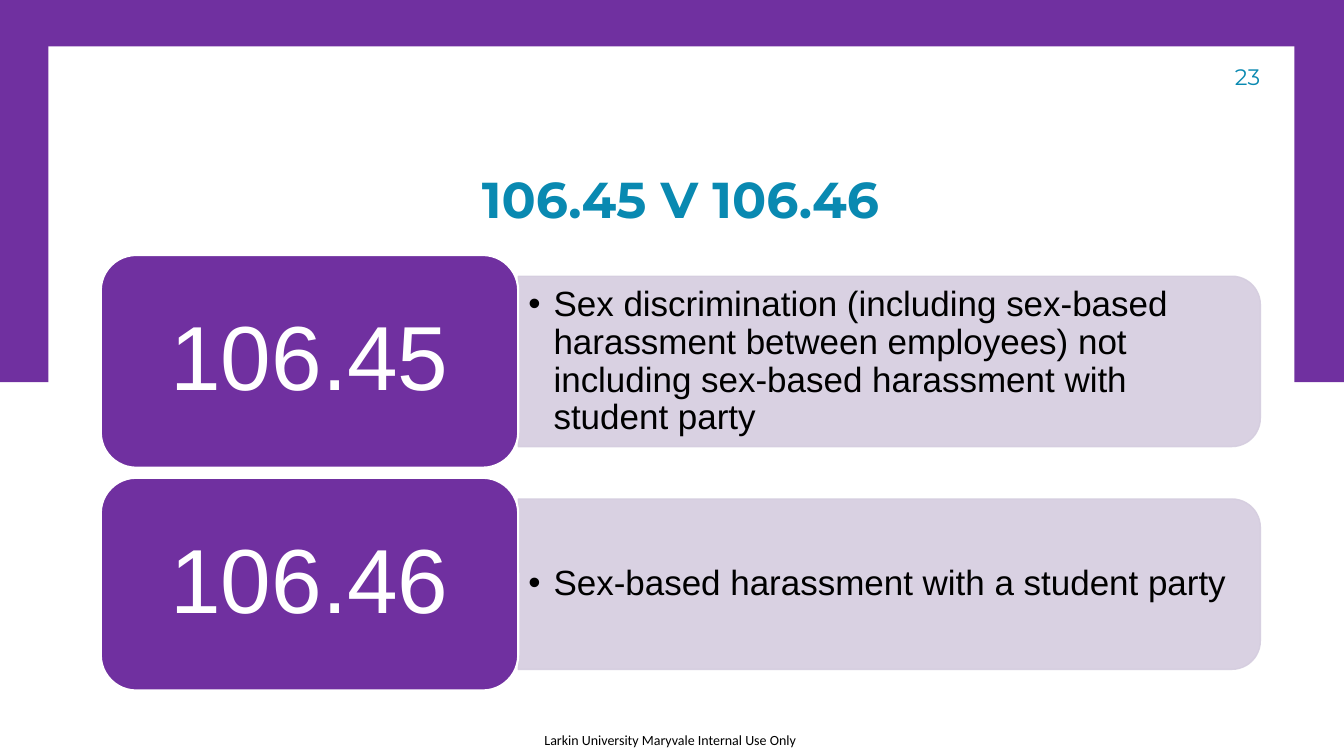
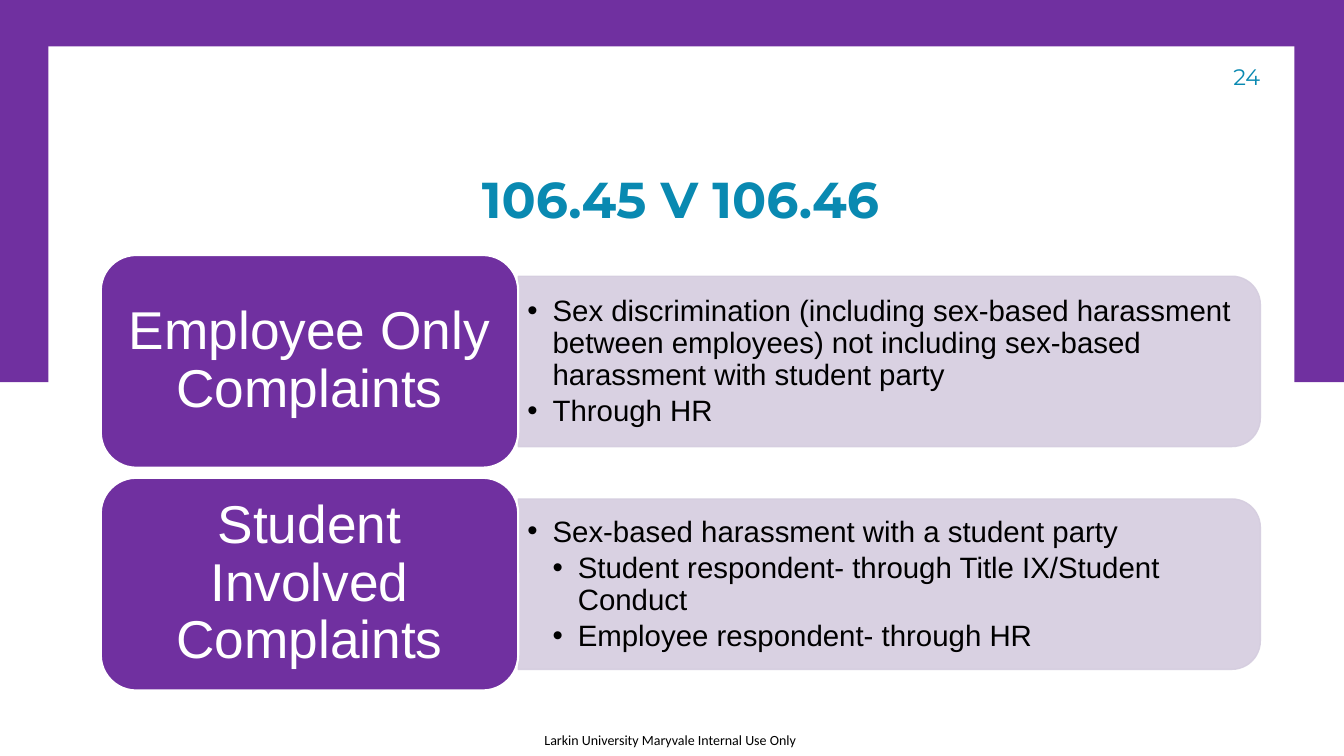
import dataclasses

import pptx
import pptx.dml.color
import pptx.enum.shapes
import pptx.enum.text
import pptx.oxml.ns
import pptx.util
from lxml import etree

EMU_PER_PX = 9144
SHAPE = pptx.enum.shapes.MSO_SHAPE
ALIGN = pptx.enum.text.PP_ALIGN
ANCHOR = pptx.enum.text.MSO_ANCHOR
qn = pptx.oxml.ns.qn


@dataclasses.dataclass(frozen=True)
class Theme:
    purple: str = "7030A0"
    lilac: str = "D5CDDF"
    teal: str = "0989B1"
    white: str = "FFFFFF"
    black: str = "000000"
    heading_font: str = "Montserrat"
    body_font: str = "Arial"
    footer_font: str = "Calibri"
    title_size: int = 36
    number_size: int = 16
    footer_size: int = 10
    panel_opacity: int = 90


@dataclasses.dataclass(frozen=True)
class RowStyle:
    label_size: int
    detail_size: int
    label_insets: tuple
    detail_insets: tuple


THEME = Theme()
LARGE = RowStyle(65, 25, (27, 14), (10, 5))
COMPACT = RowStyle(38, 21, (16, 8), (9, 4))
DISCRIMINATION = (
    "Sex discrimination (including sex-based harassment between employees) "
    "not including sex-based harassment with student party"
)
STUDENT_PARTY = "Sex-based harassment with a student party"
TITLE = "106.45 V 106.46"
FOOTER = "Larkin University Maryvale Internal Use Only"

SLIDES = [
    (23, LARGE, [
        ("106.45", [(0, DISCRIMINATION)]),
        ("106.46", [(0, STUDENT_PARTY)]),
    ]),
    (24, COMPACT, [
        ("Employee Only Complaints", [(0, DISCRIMINATION), (0, "Through HR")]),
        ("Student Involved Complaints", [
            (0, STUDENT_PARTY),
            (1, "Student respondent- through Title IX/Student Conduct"),
            (1, "Employee respondent- through HR"),
        ]),
    ]),
]


def px(length):
    return pptx.util.Emu(round(length * EMU_PER_PX))


def rgb(color):
    return pptx.dml.color.RGBColor.from_string(color)


def place(shape, box):
    shape.left, shape.top, shape.width, shape.height = map(px, box)


def add_block(slide, preset, box, fill, line=None, line_width=1):
    block = slide.shapes.add_shape(preset, *map(px, box))
    block.shadow.inherit = False
    block.fill.solid()
    block.fill.fore_color.rgb = rgb(fill)
    if line:
        block.line.color.rgb = rgb(line)
        block.line.width = pptx.util.Pt(line_width)
    else:
        block.line.fill.background()
    return block


def set_frame(shape, insets, anchor, wrap=True):
    frame = shape.text_frame
    left, top, right, bottom = map(px, insets)
    frame.margin_left, frame.margin_right = left, right
    frame.margin_top, frame.margin_bottom = top, bottom
    frame.vertical_anchor = anchor
    frame.auto_size = pptx.enum.text.MSO_AUTO_SIZE.NONE
    frame.word_wrap = wrap
    return frame


def add_run(paragraph, text, font, size, color, bold=False):
    run = paragraph.add_run()
    run.text = text
    run.font.name = font
    run.font.size = pptx.util.Pt(size)
    run.font.color.rgb = rgb(color)
    run.font.bold = bold


def add_bullet(paragraph, level):
    paragraph.level = level
    properties = paragraph._p.get_or_add_pPr()
    properties.set("marL", str(px(25 * (level + 1))))
    properties.set("indent", str(px(-25)))
    etree.SubElement(properties, qn("a:buFont")).set("typeface", THEME.body_font)
    etree.SubElement(properties, qn("a:buChar")).set("char", "•")


def dress_layout(layout, slide):
    border = add_block(slide, SHAPE.RECTANGLE, (-3, 0, 1336, 379), THEME.purple)
    page = add_block(slide, SHAPE.RECTANGLE, (48, 46, 1236, 659), THEME.white)
    footer = slide.shapes.add_textbox(*map(px, (540, 726, 257, 17)))
    frame = set_frame(footer, (0, 0, 0, 0), ANCHOR.TOP, wrap=False)
    add_run(frame.paragraphs[0], FOOTER, THEME.footer_font,
            THEME.footer_size, THEME.black)
    for position, part in enumerate((border, page, footer), start=2):
        layout.shapes.element.insert(position, part.element)


def add_heading(slide, box, text):
    title = slide.shapes.title
    place(title, box)
    paragraph = set_frame(title, (10, 0, 10, 0), ANCHOR.BOTTOM).paragraphs[0]
    paragraph.alignment = ALIGN.CENTER
    add_run(paragraph, text, THEME.heading_font, THEME.title_size,
            THEME.teal, bold=True)


def add_page_number(slide, box, number):
    corner = slide.shapes.add_textbox(*map(px, box))
    paragraph = set_frame(corner, (10, 5, 0, 5), ANCHOR.MIDDLE).paragraphs[0]
    paragraph.alignment = ALIGN.RIGHT
    add_run(paragraph, str(number), THEME.heading_font,
            THEME.number_size, THEME.teal)


def add_panel(slide, box):
    left, top, width, height = box
    shift = (width - height) / 2
    upright = (left + shift, top - shift, height, width)
    panel = add_block(slide, SHAPE.ROUND_2_SAME_RECTANGLE, upright,
                      THEME.lilac, THEME.lilac)
    panel.rotation = 90
    for color in panel.element.spPr.iter(qn("a:srgbClr")):
        alpha = etree.SubElement(color, qn("a:alpha"))
        alpha.set("val", str(THEME.panel_opacity * 1000))


def fill_details(slide, details, box, items, style):
    place(details, box)
    slide.shapes.element.append(details.element)
    frame = set_frame(details, style.detail_insets * 2, ANCHOR.MIDDLE)
    for index, (level, text) in enumerate(items):
        paragraph = frame.add_paragraph() if index else frame.paragraphs[0]
        paragraph.alignment = ALIGN.LEFT
        paragraph.line_spacing = 0.9
        paragraph.space_before = pptx.util.Pt(0)
        paragraph.space_after = pptx.util.Pt(style.detail_size * 0.15)
        add_bullet(paragraph, level)
        add_run(paragraph, text, THEME.body_font, style.detail_size, THEME.black)


def add_label(slide, box, text, style):
    label = add_block(slide, SHAPE.ROUNDED_RECTANGLE, box, THEME.purple,
                      THEME.white, 1.5)
    frame = set_frame(label, style.label_insets * 2, ANCHOR.MIDDLE)
    paragraph = frame.paragraphs[0]
    paragraph.alignment = ALIGN.CENTER
    paragraph.line_spacing = 0.9
    add_run(paragraph, text, THEME.body_font, style.label_size, THEME.white)


def add_row(slide, box, details, label, items, style):
    left, top, width, height = box
    label_width = 414
    panel_left = left + label_width
    panel_width = width - label_width
    add_panel(slide, (panel_left, top + 21, panel_width, height - 42))
    fill_details(slide, details, (panel_left, top + 30, panel_width - 9, height - 59),
                 items, style)
    add_label(slide, (left, top, label_width, height), label, style)


def fill_slide(slide, number, style, rows):
    add_heading(slide, (100, 116, 1150, 111), TITLE)
    add_page_number(slide, (1133, 50, 117, 52), number)
    row_height, gap = 211, 10
    bodies = [holder for holder in slide.placeholders
              if holder.placeholder_format.idx > 0]
    for index, (details, (label, items)) in enumerate(zip(bodies, rows)):
        box = (100, 253 + index * (row_height + gap), 1150, row_height)
        add_row(slide, box, details, label, items, style)


def main():
    deck = pptx.Presentation()
    deck.slide_width, deck.slide_height = px(1333), px(750)
    layout = deck.slide_layouts.get_by_name("Two Content")
    slides = [deck.slides.add_slide(layout) for _ in SLIDES]
    dress_layout(layout, slides[0])
    for slide, content in zip(slides, SLIDES):
        fill_slide(slide, *content)
    deck.save("out.pptx")


if __name__ == "__main__":
    main()
